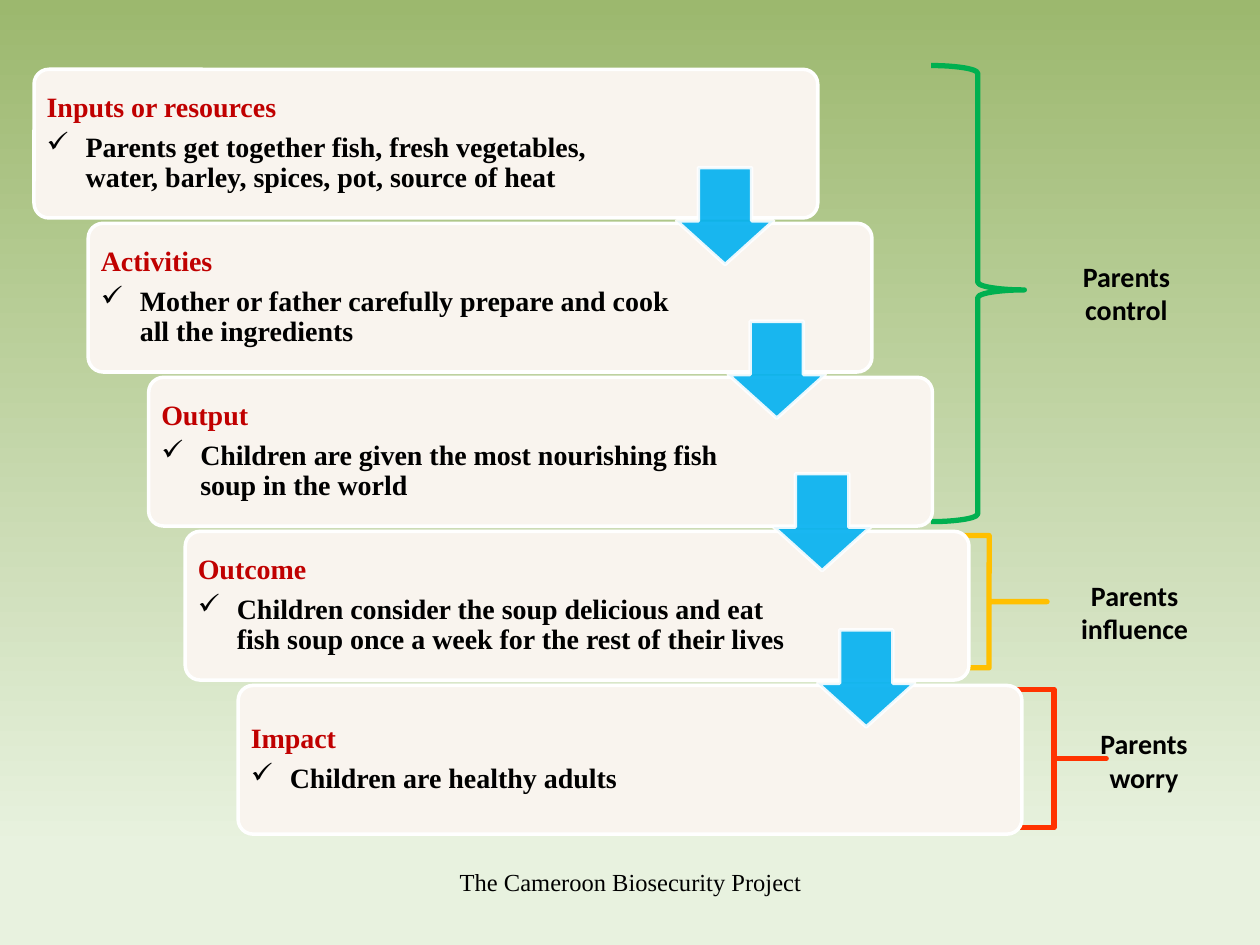
from dataclasses import dataclass

from lxml import etree
from pptx import Presentation, util as u
from pptx.dml.color import RGBColor
from pptx.enum import shapes, text
from pptx.oxml import ns

WIDE, HIGH = 10, 7.5
TOP, PITCH = 0.55, 1.2225  # first row and row step of the stairs
CARD_W, CARD_H, PAD = 6.22, 1.18, 0.03
ARROW = 0.77
HUES = {
    "pale": "E8F2DF", "moss": "9CB86E", "cream": "F9F4EE", "white": "FFFFFF",
    "head": "C00000", "black": "000000", "blue": "00B0F0",
    "green": "00B050", "gold": "FFC000", "red": "FF3300",
}
SERIF, SANS = "Times New Roman", "Calibri"
KIND = shapes.MSO_SHAPE
MID = text.PP_ALIGN.CENTER


@dataclass
class Step:
    left: float
    head: str
    item: str
    text_w: float = 4.92


@dataclass
class Arrow:
    left: float
    top: float


@dataclass
class Brace:
    box: tuple
    bend: tuple
    hue: str
    label: str
    spot: tuple


STEPS = [
    Step(0.27, "Inputs or resources", "Parents get together fish, fresh vegetables, "
         "water, barley, spices, pot, source of heat", 4.81),
    Step(0.7, "Activities",
         "Mother or father carefully prepare and cook all the ingredients"),
    Step(1.18, "Output",
         "Children are given the most nourishing fish soup in the world"),
    Step(1.47, "Outcome", "Children consider the soup delicious and eat "
         "fish soup once a week for the rest of their lives"),
    Step(1.89, "Impact", "Children are healthy adults"),
]
ARROWS = [Arrow(5.37, 1.33), Arrow(5.78, 2.55), Arrow(6.14, 3.76), Arrow(6.49, 5)]
BRACES = [
    Brace((7.39, 0.52, 0.74, 3.62), (0.083, 0.492), "green",
          "Parents control", (8.23, 2.01, 1.42, 0.64)),
    Brace((7.39, 4.25, 0.92, 1.05), (0, 0.5), "gold",
          "Parents influence", (8.21, 4.54, 1.59, 0.64)),
    Brace((7.95, 5.47, 0.83, 1.1), (0, 0.5), "red",
          "Parents worry", (8.36, 5.72, 1.44, 0.64)),
]


def rgb(hue: str) -> RGBColor:
    return RGBColor.from_string(HUES[hue])


def fade(shape, share: int) -> None:
    """Make fill and line opaque to the given percent."""
    for tint in shape._element.spPr.iter(ns.qn("a:srgbClr")):
        etree.SubElement(tint, ns.qn("a:alpha"), val=str(share * 1000))


def form(slide, kind, box: tuple, bend: tuple, fill: str | None, line: str, size: float):
    shape = slide.shapes.add_shape(kind, *map(u.Inches, box))
    shape.shadow.inherit = False
    for i, value in enumerate(bend):
        shape.adjustments[i] = value
    if fill:
        shape.fill.solid()
        shape.fill.fore_color.rgb = rgb(fill)
    else:
        shape.fill.background()
    shape.line.color.rgb = rgb(line)
    shape.line.width = u.Pt(size)
    return shape


def frame(slide, box: tuple, **looks):
    area = slide.shapes.add_textbox(*map(u.Inches, box)).text_frame
    for name, value in {"word_wrap": True, **looks}.items():
        setattr(area, name, value)
    return area


def write(para, words: str, face: str, size: int, hue: str, bold: bool = True,
          **looks) -> None:
    for name, value in looks.items():
        setattr(para, name, value)
    run = para.add_run()
    run.text = words
    for name, value in {"name": face, "size": u.Pt(size), "bold": bold}.items():
        setattr(run.font, name, value)
    run.font.color.rgb = rgb(hue)


def tick(para) -> None:
    """Give the paragraph a hanging check mark."""
    props = para._p.get_or_add_pPr()
    hang = u.Inches(0.31)
    props.set("marL", str(hang))
    props.set("indent", str(-hang))
    etree.SubElement(props, ns.qn("a:buChar"), char="✓")


def card(slide, step: Step, row: int) -> None:
    top = TOP + row * PITCH
    form(slide, KIND.ROUNDED_RECTANGLE, (step.left, top, CARD_W, CARD_H),
         (0.1,), "cream", "white", 2)
    sides = ("left", "top", "right", "bottom")
    looks = {f"margin_{side}": u.Inches(0.07) for side in sides}
    area = frame(slide, (step.left + PAD, top + PAD, step.text_w, CARD_H - 2 * PAD),
                 vertical_anchor=text.MSO_ANCHOR.MIDDLE, **looks)
    write(area.paragraphs[0], step.head, SERIF, 16, "head",
          line_spacing=0.9, space_after=u.Pt(5.6))
    item = area.add_paragraph()
    tick(item)
    write(item, step.item, SERIF, 16, "black",
          level=1, line_spacing=0.9, space_after=u.Pt(2.4))


def main() -> None:
    deck = Presentation()
    deck.slide_width, deck.slide_height = u.Inches(WIDE), u.Inches(HIGH)
    slide = deck.slides.add_slide(deck.slide_layouts[6])

    back = slide.background.fill
    back.gradient()
    back.gradient_angle = 90
    for stop, (hue, place) in zip(back.gradient_stops, (("pale", 0.1), ("moss", 1))):
        stop.color.rgb = rgb(hue)
        stop.position = place

    foot = frame(slide, (3.42, 6.83, 3.17, 0.52))
    write(foot.paragraphs[0], "The Cameroon Biosecurity Project", SERIF, 14,
          "black", False, alignment=MID)
    for brace in BRACES:
        form(slide, KIND.RIGHT_BRACE, brace.box, brace.bend, None, brace.hue, 3)
        label = frame(slide, brace.spot)
        write(label.paragraphs[0], brace.label, SANS, 16, "black", alignment=MID)
    for row, step in enumerate(STEPS):
        card(slide, step, row)
    for arrow in ARROWS:
        shape = form(slide, KIND.DOWN_ARROW, (arrow.left, arrow.top, ARROW, ARROW),
                     (), "blue", "white", 2)
        # The preset stores head length first, then shaft width.
        guides = {guide.name: i for i, guide in enumerate(shape.adjustments._adjustments)}
        shape.adjustments[guides["adj1"]] = 0.55
        shape.adjustments[guides["adj2"]] = 0.45
        fade(shape, 90)
    deck.save("out.pptx")


if __name__ == "__main__":
    main()
